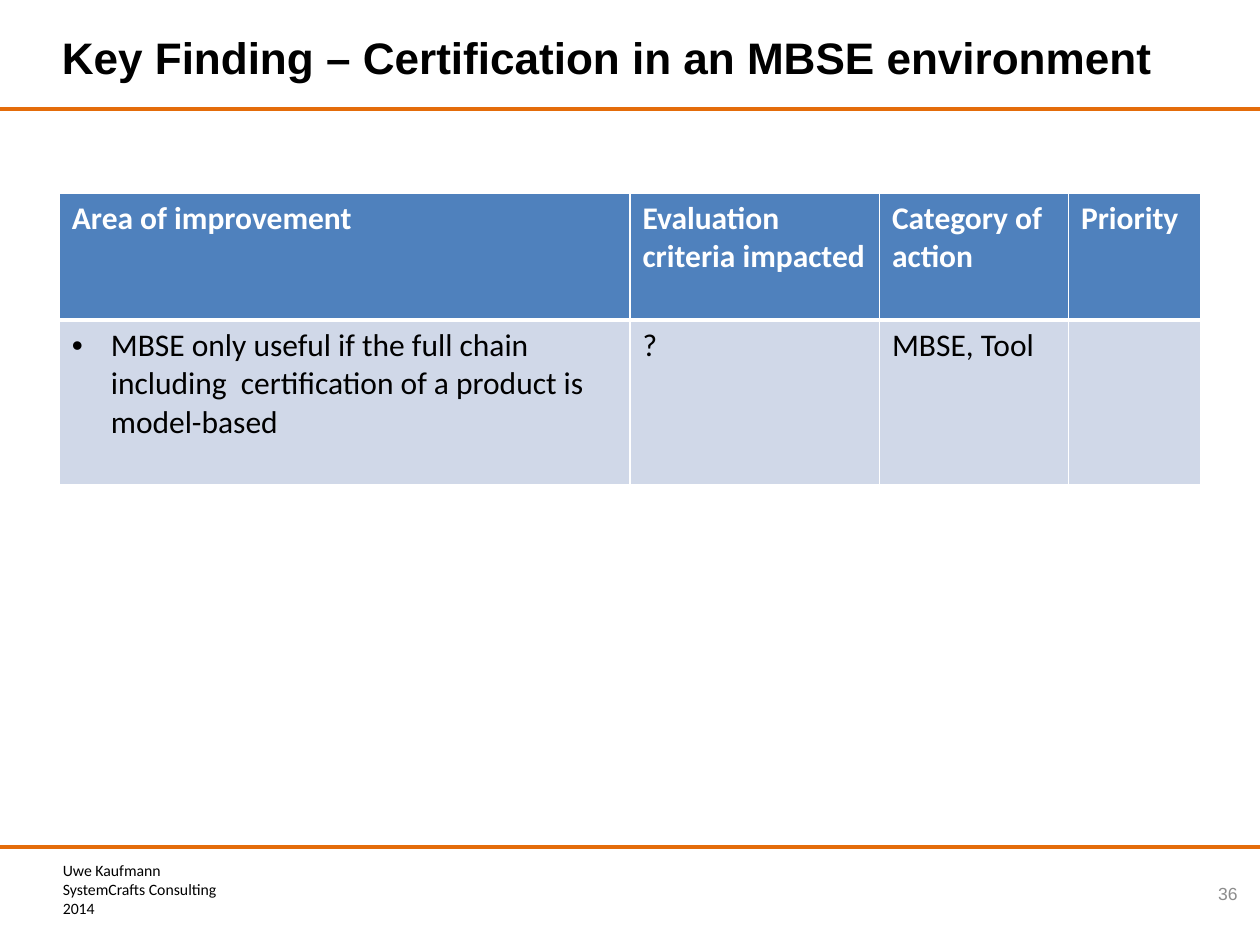
from lxml.etree import SubElement
from pptx import Presentation
from pptx.dml.color import RGBColor
from pptx.enum.shapes import MSO_CONNECTOR
from pptx.enum.text import MSO_ANCHOR, MSO_AUTO_SIZE, PP_ALIGN
from pptx.oxml.ns import qn
from pptx.util import Inches, Pt

WIDTH, HEIGHT = Inches(10), Inches(7.5)
COLORS = {
    "rule": "E46C0A",
    "text": "000000",
    "number": "8C8C8C",
    "header": "4F81BD",
    "body": "D0D8E8",
    "white": "FFFFFF",
}
COLUMNS = [4.53, 1.98, 1.5, 1.05]
ROWS = [1.01, 1.31]
CELLS = [
    ["Area of improvement", "Evaluation criteria impacted", "Category of action", "Priority"],
    [
        "MBSE only useful if the full chain including  certification of a product is model-based",
        "?",
        "MBSE, Tool",
        "",
    ],
]


def rgb(name):
    return RGBColor.from_string(COLORS[name])


def format_text(tf, font, size, color, bold=False, align=PP_ALIGN.LEFT):
    for p in tf.paragraphs:
        p.alignment = align
        p.font.size = Pt(size)
        for r in p.runs:
            r.font.name = font
            r.font.size = Pt(size)
            r.font.bold = bold
            r.font.color.rgb = rgb(color)


def add_rule(s, y):
    line = s.shapes.add_connector(
        MSO_CONNECTOR.STRAIGHT, 0, int(HEIGHT * y), WIDTH, int(HEIGHT * y)
    )
    line.line.color.rgb = rgb("rule")
    line.line.width = Pt(2.25)
    SubElement(line._element.spPr, qn("a:effectLst"))


def add_title(s, text):
    title = s.shapes.title
    title.left, title.top = Inches(0.39), Inches(0.06)
    title.width, title.height = Inches(9), Inches(0.78)
    tf = title.text_frame
    tf.text = text
    tf.word_wrap = True
    tf.auto_size = MSO_AUTO_SIZE.NONE
    tf.vertical_anchor = MSO_ANCHOR.MIDDLE
    format_text(tf, "Arial", 25.2, "text", bold=True)


def add_text(s, text, left, top, width, height):
    box = s.shapes.add_textbox(Inches(left), Inches(top), Inches(width), Inches(height))
    tf = box.text_frame
    tf.text = text
    return tf


def set_borders(cell, bottom):
    tc_pr = cell._tc.get_or_add_tcPr()
    widths = {"lnL": 1, "lnR": 1, "lnT": 1, "lnB": bottom}
    for i, (tag, width) in enumerate(widths.items()):
        ln = tc_pr.makeelement(qn(f"a:{tag}"), {"w": str(Pt(width))})
        fill = SubElement(ln, qn("a:solidFill"))
        SubElement(fill, qn("a:srgbClr"), val=COLORS["white"])
        tc_pr.insert(i, ln)


def add_bullet(p):
    p_pr = p._p.get_or_add_pPr()
    p_pr.set("marL", str(Inches(0.31)))
    p_pr.set("indent", str(-Inches(0.31)))
    SubElement(p_pr, qn("a:buFont"), typeface="Arial")
    SubElement(p_pr, qn("a:buChar"), char="•")


def add_findings_table(s):
    frame = s.shapes.add_table(
        len(ROWS), len(COLUMNS), Inches(0.47), Inches(1.53),
        Inches(sum(COLUMNS)), Inches(sum(ROWS)),
    )
    table = frame.table
    for column, width in zip(table.columns, COLUMNS):
        column.width = Inches(width)
    for i, (row, height) in enumerate(zip(table.rows, ROWS)):
        row.height = Inches(height)
        header = i == 0
        for cell, text in zip(row.cells, CELLS[i]):
            cell.text = text
            cell.fill.solid()
            cell.fill.fore_color.rgb = rgb("header" if header else "body")
            set_borders(cell, 3 if header else 1)
            if not header and cell is not None and text == CELLS[1][0]:
                add_bullet(cell.text_frame.paragraphs[0])
            format_text(cell.text_frame, "Calibri", 18, "white" if header else "text", header)
    for cell in table.rows[1].cells:
        cell._tc.tcPr.find(qn("a:lnT")).set("w", str(Pt(3)))


def main():
    prs = Presentation()
    prs.slide_width, prs.slide_height = WIDTH, HEIGHT
    s = prs.slides.add_slide(prs.slide_layouts[5])
    for y in (0.896, 0.115):
        add_rule(s, y)
    footer = add_text(s, "Uwe Kaufmann\nSystemCrafts Consulting\n2014", 0.4, 6.78, 1.55, 0.56)
    footer.word_wrap = False
    footer.auto_size = MSO_AUTO_SIZE.SHAPE_TO_FIT_TEXT
    format_text(footer, "Calibri", 9, "text")
    add_title(s, "Key Finding – Certification in an MBSE environment")
    number = add_text(s, "36", 9.3, 6.89, 0.62, 0.4)
    number.word_wrap = True
    number.vertical_anchor = MSO_ANCHOR.MIDDLE
    format_text(number, "Arial", 10, "number", align=PP_ALIGN.RIGHT)
    add_findings_table(s)
    prs.save("out.pptx")


if __name__ == "__main__":
    main()
